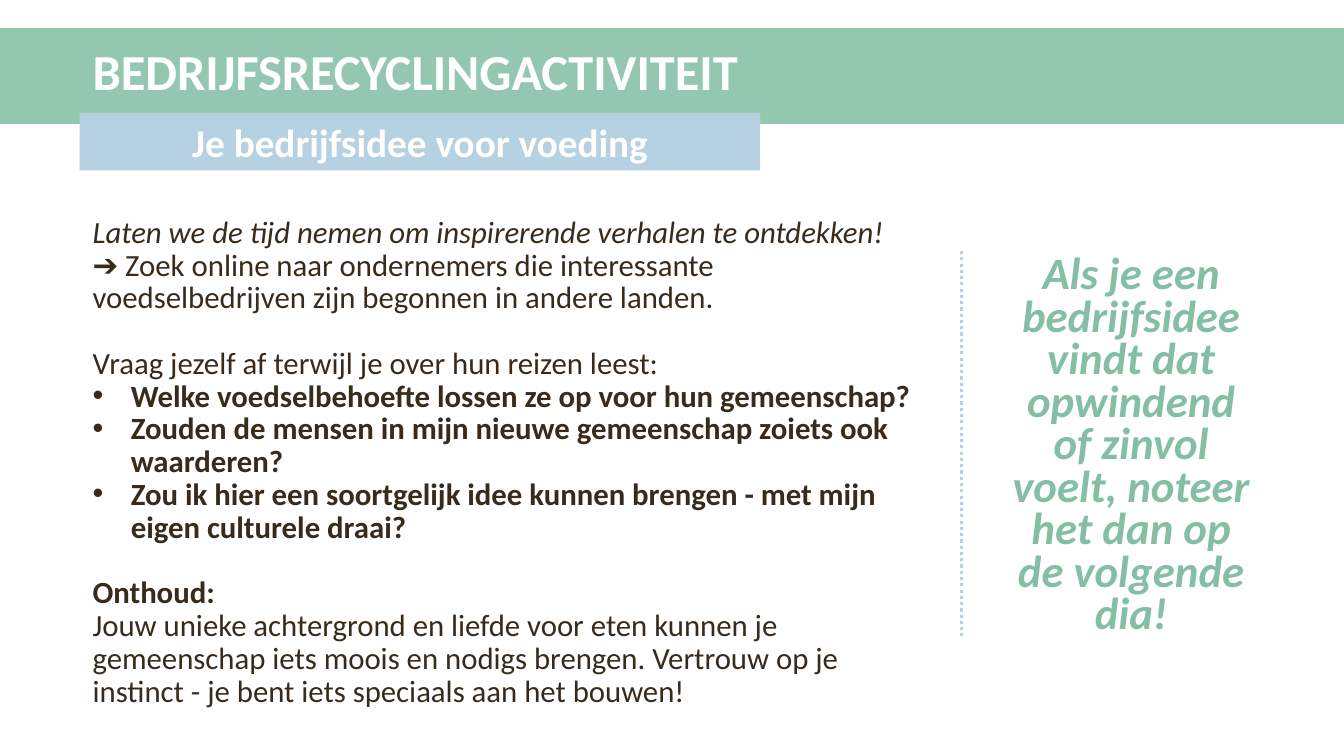
from dataclasses import dataclass

from lxml import etree
from pptx import Presentation
from pptx import util as u
from pptx.dml.color import RGBColor
from pptx.enum import dml, shapes, text
from pptx.oxml.ns import qn


@dataclass(frozen=True)
class Theme:
    font: str = "Calibri"
    green: str = "94C7B0"
    quote_green: str = "84BFA4"
    blue: str = "B6D1E1"
    brown: str = "382B1B"
    white: str = "FFFFFF"
    title: float = 36
    quote: float = 32
    subtitle: float = 28
    body: float = 22
    body_line: float = 23.4
    quote_line: float = 30.4


THEME = Theme()


def add_bullet(paragraph, indent=0.38):
    props = paragraph._p.get_or_add_pPr()
    props.set("marL", str(u.Inches(indent)))
    props.set("indent", str(-u.Inches(indent)))
    etree.SubElement(props, qn("a:buFont")).set("typeface", "Arial")
    etree.SubElement(props, qn("a:buChar")).set("char", "•")


def write(frame, words, *, size, color, bold=False, italic=False, align=None,
          line=None, before=0, bullet=False):
    """Add one paragraph; each line break in words stays inside it.

    bold and italic may be tuples with one value per line.
    """
    frame.word_wrap = True
    paragraph = frame.paragraphs[0]
    if paragraph.runs:
        paragraph = frame.add_paragraph()
    if bullet:
        add_bullet(paragraph)
    paragraph.alignment = align
    if line:
        paragraph.line_spacing = line
    if before:
        paragraph.space_before = u.Pt(before)
    for index, part in enumerate(words.split("\n")):
        if index:
            paragraph.add_line_break()
        run = paragraph.add_run()
        run.text = part
        run.font.name = THEME.font
        run.font.size = u.Pt(size)
        run.font.color.rgb = RGBColor.from_string(color)
        run.font.bold = bold[index] if isinstance(bold, tuple) else bold
        run.font.italic = italic[index] if isinstance(italic, tuple) else italic


def add_band(slide, box, color):
    band = slide.shapes.add_shape(shapes.MSO_SHAPE.RECTANGLE, *map(u.Inches, box))
    band.shadow.inherit = False
    band.fill.solid()
    band.fill.fore_color.rgb = RGBColor.from_string(color)
    band.line.fill.background()
    return band


def add_text_area(slide, box):
    return slide.shapes.add_textbox(*map(u.Inches, box)).text_frame


def add_header(slide, box):
    left, top, width, height = box
    add_band(slide, box, THEME.green)

    # Title on the green band
    title = add_text_area(slide, (left + 0.82, top + 0.06, width - 1.4, height - 0.16))
    title.vertical_anchor = text.MSO_ANCHOR.MIDDLE
    write(title, "BEDRIJFSRECYCLINGACTIVITEIT", size=THEME.title,
          color=THEME.white, bold=True, line=0.9)

    # Subtitle label overlapping the lower edge of the band
    label = add_band(slide, (left + 0.79, top + height - 0.11, 6.75, 0.57), THEME.blue)
    label.text_frame.vertical_anchor = text.MSO_ANCHOR.TOP
    write(label.text_frame, "Je bedrijfsidee voor voeding",
          size=THEME.subtitle, color=THEME.white, bold=True,
          align=text.PP_ALIGN.CENTER)


def add_assignment(slide, box):
    frame = add_text_area(slide, box)
    style = dict(size=THEME.body, color=THEME.brown, line=u.Pt(THEME.body_line))
    gap = THEME.body_line

    # Introduction
    write(frame, "Laten we de tijd nemen om inspirerende verhalen te ontdekken!\n"
          "➔ Zoek online naar ondernemers die interessante voedselbedrijven "
          "zijn begonnen in andere landen.", italic=(True, False), **style)

    # Questions
    write(frame, "Vraag jezelf af terwijl je over hun reizen leest:",
          before=gap, **style)
    questions = (
        "Welke voedselbehoefte lossen ze op voor hun gemeenschap?",
        "Zouden de mensen in mijn nieuwe gemeenschap zoiets ook waarderen?",
        "Zou ik hier een soortgelijk idee kunnen brengen - met mijn eigen "
        "culturele draai?",
    )
    for question in questions:
        write(frame, question, bold=True, bullet=True, **style)

    # Reminder
    write(frame, "Onthoud:\n"
          "Jouw unieke achtergrond en liefde voor eten kunnen je gemeenschap "
          "iets moois en nodigs brengen. Vertrouw op je instinct - je bent iets "
          "speciaals aan het bouwen!", bold=(True, False), before=gap, **style)


def add_call_to_action(slide, box):
    left, top, width, height = box

    # Dotted divider on the left edge
    x = u.Inches(left)
    divider = slide.shapes.add_connector(
        shapes.MSO_CONNECTOR.STRAIGHT, x, u.Inches(top), x, u.Inches(top + height))
    divider.line.color.rgb = RGBColor.from_string(THEME.blue)
    divider.line.width = u.Pt(2.25)
    divider.line.dash_style = dml.MSO_LINE.ROUND_DOT
    etree.SubElement(divider._element.spPr, qn("a:effectLst"))

    # Prompt beside it
    prompt = add_text_area(slide, (left + 0.36, top, width - 0.36, height))
    write(prompt, "Als je een bedrijfsidee vindt dat opwindend of zinvol voelt, "
          "noteer het dan op de volgende dia!", size=THEME.quote,
          color=THEME.quote_green, bold=True, italic=True,
          align=text.PP_ALIGN.CENTER, line=u.Pt(THEME.quote_line))


def main():
    deck = Presentation()
    deck.slide_width, deck.slide_height = u.Inches(13.33), u.Inches(7.5)
    slide = deck.slides.add_slide(deck.slide_layouts[6])
    add_header(slide, (0, 0.28, 13.33, 0.95))
    add_assignment(slide, (0.82, 2.1, 8.45, 4.59))
    add_call_to_action(slide, (9.54, 2.49, 3, 3.82))
    deck.save("out.pptx")


if __name__ == "__main__":
    main()
